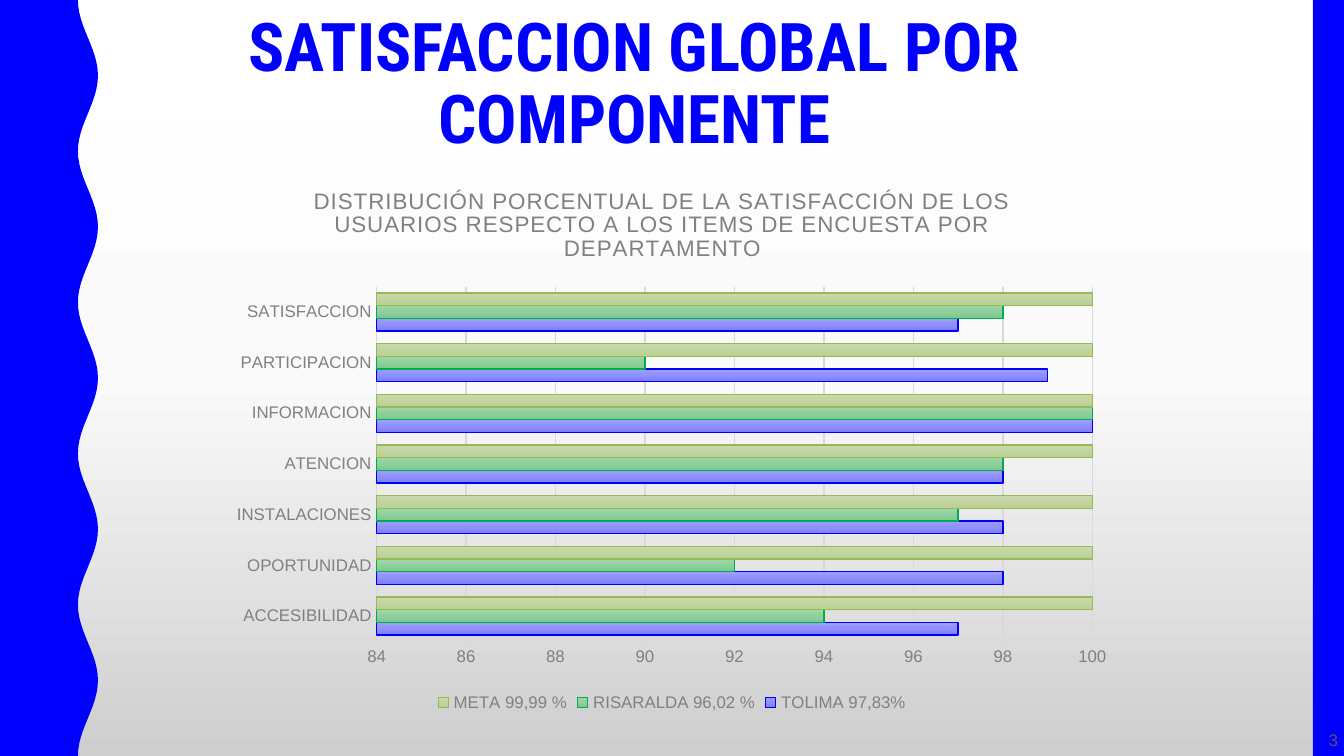
import copy
import math
from dataclasses import dataclass

import lxml.etree
import pptx
import pptx.chart.data
import pptx.dml.color
import pptx.enum.chart
import pptx.enum.shapes
import pptx.enum.text
import pptx.oxml
import pptx.oxml.ns
import pptx.util

WIDTH, HEIGHT = 1344, 756
EMU_PER_PX = 9144000 / WIDTH


@dataclass(frozen=True)
class Theme:
    blue: str = "0000FF"
    grey: str = "808080"
    grid: str = "D9D9D9"
    number: str = "595959"
    background: tuple = ("FFFFFF", "FAFAFA", "CECECE")
    bars: tuple = (
        (("9E9EFF", "9090FF", "7C7CFF"), "0000F9"),
        (("9DD8A9", "90CF9D", "7CC98C"), "00AC4E"),
        (("CADAAF", "C1D4A2", "B9D091"), "98B757"),
    )
    heading_font: str = "Roboto Condensed"
    body_font: str = "Arial"
    heading_size: int = 36
    chart_title_size: int = 12
    small_size: int = 9
    hairline: float = 0.75


def px(length):
    return round(length * EMU_PER_PX)


def rgb(code):
    return pptx.dml.color.RGBColor.from_string(code)


class SlideWriter:
    def __init__(self, slide, theme):
        self.slide = slide
        self.theme = theme

    def style(self, font, size, color, family=None, bold=False):
        font.size = pptx.util.Pt(size)
        font.name = family or self.theme.body_font
        font.bold = bold
        font.color.rgb = rgb(color)

    def gradient(self, fill, owner, colors):
        fill.gradient()
        fill.gradient_angle = 270
        stops = owner.xpath(".//a:gsLst")[0]
        stops.insert(1, copy.deepcopy(stops[0]))
        for index, (stop, color) in enumerate(zip(fill.gradient_stops, colors)):
            stop.position = index / 2
            stop.color.rgb = rgb(color)

    def background(self):
        self.gradient(self.slide.background.fill, self.slide.element, self.theme.background)

    def paint(self, shape):
        shape.shadow.inherit = False
        shape.fill.solid()
        shape.fill.fore_color.rgb = rgb(self.theme.blue)
        shape.line.fill.background()

    def wave(self, inner, outer, waves, steps):
        middle, swing = (inner + outer) / 2, (outer - inner) / 2
        edge = [
            (px(middle - swing * math.cos(2 * math.pi * step / steps)),
             px(HEIGHT * step / (waves * steps)))
            for step in range(waves * steps + 1)
        ]
        outline = self.slide.shapes.build_freeform(0, 0)
        outline.add_line_segments(edge + [(0, px(HEIGHT))], close=True)
        self.paint(outline.convert_to_shape())

    def band(self, left, top, width, height):
        self.paint(self.slide.shapes.add_shape(
            pptx.enum.shapes.MSO_SHAPE.RECTANGLE, *map(px, (left, top, width, height))))

    def text(self, box, words, align, anchor, spacing, **look):
        frame = self.slide.shapes.add_textbox(*map(px, box)).text_frame
        frame.word_wrap = True
        frame.margin_left = frame.margin_right = frame.margin_top = frame.margin_bottom = 0
        frame.vertical_anchor = anchor
        frame.text = words
        paragraph = frame.paragraphs[0]
        paragraph.alignment = align
        paragraph.line_spacing = spacing
        self.style(paragraph.runs[0].font, **look)

    def layout(self, element, index, **settings):
        for existing in element.xpath("c:layout"):
            element.remove(existing)
        tag = pptx.oxml.ns.qn
        layout = pptx.oxml.parse_xml(
            f'<c:layout {pptx.oxml.ns.nsdecls("c")}><c:manualLayout/></c:layout>')
        for name, value in settings.items():
            lxml.etree.SubElement(layout[0], tag(f"c:{name}")).set("val", str(value))
        element.insert(index, layout)

    def bar_chart(self, box, title, categories, series):
        theme = self.theme
        data = pptx.chart.data.CategoryChartData()
        data.categories = categories
        for name, values in series:
            data.add_series(name, values)
        chart = self.slide.shapes.add_chart(
            pptx.enum.chart.XL_CHART_TYPE.BAR_CLUSTERED, *map(px, box), data).chart
        self.style(chart.font, theme.small_size, theme.grey)

        heading = chart.chart_title.text_frame
        heading.text = title
        run = heading.paragraphs[0].runs[0]
        self.style(run.font, theme.chart_title_size, theme.grey)
        run.font._element.set("spc", "50")
        chart.chart_title.include_in_layout = False
        self.layout(chart.chart_title._element, 1, xMode="edge", yMode="edge", x=0.1, y=0.02)
        plot_area = chart.element.xpath(".//c:plotArea")[0]
        self.layout(plot_area, 0, layoutTarget="inner", xMode="edge", yMode="edge",
                    x=0.174, y=0.21, w=0.79, h=0.65)

        chart.has_legend = True
        chart.legend.position = pptx.enum.chart.XL_LEGEND_POSITION.BOTTOM
        chart.legend.include_in_layout = False
        self.style(chart.legend.font, theme.small_size, theme.grey)

        for axis in (chart.category_axis, chart.value_axis):
            axis.major_tick_mark = axis.minor_tick_mark = pptx.enum.chart.XL_TICK_MARK.NONE
            self.style(axis.tick_labels.font, theme.small_size, theme.grey)
        scale = chart.value_axis
        scale.minimum_scale, scale.maximum_scale, scale.major_unit = 84, 100, 2
        scale.has_major_gridlines = True
        scale.format.line.fill.background()
        for line in (chart.category_axis.format.line, scale.major_gridlines.format.line):
            self.outline(line, theme.grid)

        plot = chart.plots[0]
        plot.vary_by_categories = False
        plot.gap_width = 100
        plot.overlap = 0
        for bars, (colors, border) in zip(plot.series, theme.bars):
            self.gradient(bars.format.fill, bars._element, colors)
            self.outline(bars.format.line, border)

    def outline(self, line, color):
        line.width = pptx.util.Pt(self.theme.hairline)
        line.color.rgb = rgb(color)


def main():
    deck = pptx.Presentation()
    deck.slide_width, deck.slide_height = px(WIDTH), px(HEIGHT)
    theme = Theme()
    writer = SlideWriter(deck.slides.add_slide(deck.slide_layouts[6]), theme)
    align, anchor = pptx.enum.text.PP_ALIGN, pptx.enum.text.MSO_ANCHOR

    writer.background()
    writer.wave(inner=78, outer=98, waves=5, steps=24)
    writer.band(1313, 0, 31, HEIGHT)
    writer.text((101, 13, 1067, 159), "SATISFACCION GLOBAL POR COMPONENTE",
                align.CENTER, anchor.TOP, 0.9, size=theme.heading_size,
                color=theme.blue, family=theme.heading_font, bold=True)
    writer.text((1271, 681, 67, 69), "3", align.RIGHT, anchor.BOTTOM, 1,
                size=theme.small_size, color=theme.number)
    writer.bar_chart(
        (219, 172, 906, 546),
        "DISTRIBUCIÓN PORCENTUAL DE LA SATISFACCIÓN DE LOS USUARIOS "
        "RESPECTO A LOS ITEMS DE ENCUESTA POR DEPARTAMENTO",
        ("ACCESIBILIDAD", "OPORTUNIDAD", "INSTALACIONES", "ATENCION",
         "INFORMACION", "PARTICIPACION", "SATISFACCION"),
        (
            ("TOLIMA 97,83%", (97, 98, 98, 98, 100, 99, 97)),
            ("RISARALDA 96,02 %", (94, 92, 97, 98, 100, 90, 98)),
            ("META 99,99 %", (100, 100, 100, 100, 100, 100, 100)),
        ),
    )
    deck.save("out.pptx")


if __name__ == "__main__":
    main()
